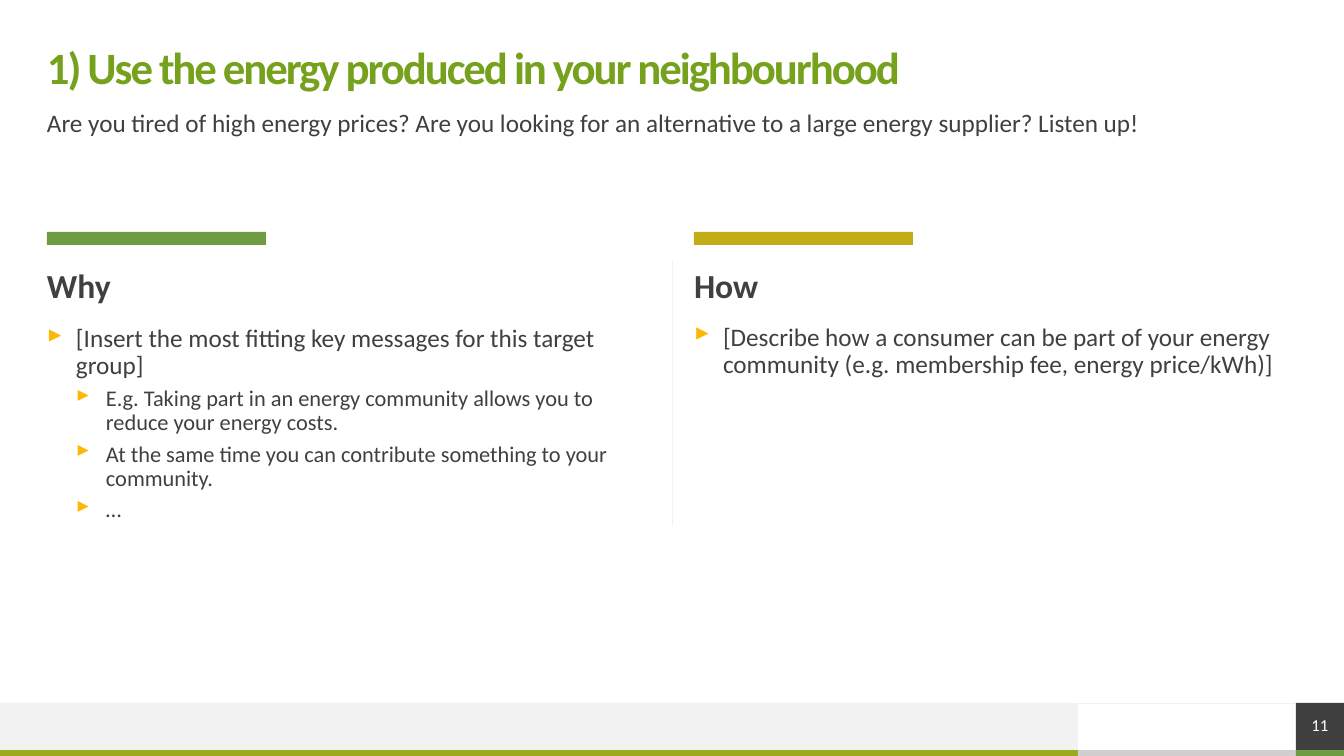
from lxml import etree
from pptx import Presentation
from pptx.dml.color import RGBColor
from pptx.enum.shapes import MSO_CONNECTOR, MSO_SHAPE
from pptx.enum.text import MSO_ANCHOR, PP_ALIGN
from pptx.oxml.ns import qn
from pptx.util import Emu, Pt

RECTANGLE = MSO_SHAPE.RECTANGLE
STRAIGHT = MSO_CONNECTOR.STRAIGHT
TOP, MIDDLE = MSO_ANCHOR.TOP, MSO_ANCHOR.MIDDLE
LEFT, CENTER = PP_ALIGN.LEFT, PP_ALIGN.CENTER

TITLE_GREEN = RGBColor(0x75, 0xA1, 0x1D)
GREEN = RGBColor(0x6D, 0x9D, 0x40)
OLIVE = RGBColor(0x9C, 0xAA, 0x20)
MUSTARD = RGBColor(0xC3, 0xAD, 0x16)
DARK = RGBColor(0x40, 0x40, 0x40)
SILVER = RGBColor(0xD0, 0xCE, 0xCE)
PALE = RGBColor(0xF2, 0xF2, 0xF2)
WHITE = RGBColor(0xFF, 0xFF, 0xFF)
BULLET_COLOR = "FBB804"

TITLE = "1) Use the energy produced in your neighbourhood"
SUBTITLE = ("Are you tired of high energy prices? Are you looking for an "
            "alternative to a large energy supplier? Listen up!")
COLUMNS = [
    {"heading": "Why", "color": GREEN, "body_top": 326, "items": [
        (0, "[Insert the most fitting key messages for this target group]"),
        (1, "E.g. Taking part in an energy community allows you to reduce "
            "your energy costs."),
        (1, "At the same time you can contribute something to your community."),
        (1, "…"),
    ]},
    {"heading": "How", "color": MUSTARD, "body_top": 325, "items": [
        (0, "[Describe how a consumer can be part of your energy community "
            "(e.g. membership fee, energy price/kWh)]"),
    ]},
]
PAGE_NUMBER = "11"

FORMATS = {
    "title": {"size": Pt(32), "bold": True, "color": TITLE_GREEN},
    "subtitle": {"size": Pt(18), "color": DARK},
    "heading": {"size": Pt(24), "bold": True, "color": DARK},
    "level0": {"size": Pt(18), "color": DARK},
    "level1": {"size": Pt(16), "color": DARK},
    "number": {"size": Pt(12), "color": WHITE},
}
LEVELS = [
    {"margin": 29, "indent": -29, "before": Pt(10)},
    {"margin": 59, "indent": -30, "before": Pt(5)},
]

WIDTH, HEIGHT = 1344, 756
MARGIN, GUTTER = 47, 44
CONTENT_WIDTH = WIDTH - 2 * MARGIN
COLUMN_WIDTH = (CONTENT_WIDTH - GUTTER) // 2
BAR_WIDTH, BAR_HEIGHT, BAR_TOP = 219, 13, 232
FOOTER_TOP, STRIP_TOP = 703, 750
BADGE_LEFT = 1296
FOOTER_WIDTH = 1078


def px(value):
    return Emu(round(value * 914400 / 100.8))


def add_box(slide, left, top, width, height, color):
    shape = slide.shapes.add_shape(
        RECTANGLE, px(left), px(top), px(width), px(height))
    shape.shadow.inherit = False
    shape.fill.solid()
    shape.fill.fore_color.rgb = color
    shape.line.fill.background()
    return shape


def add_rule(slide, start_x, start_y, end_x, end_y):
    rule = slide.shapes.add_connector(
        STRAIGHT, px(start_x), px(start_y), px(end_x), px(end_y))
    rule.line.color.rgb = PALE
    rule.line.width = Pt(0.5)
    etree.SubElement(rule._element.spPr, qn("a:effectLst"))


def prepare_frame(shape, anchor):
    frame = shape.text_frame
    frame.word_wrap = True
    frame.vertical_anchor = anchor
    for side in ("left", "top", "right", "bottom"):
        setattr(frame, f"margin_{side}", 0)
    return frame


def write(paragraph, text, style, alignment=LEFT):
    paragraph.alignment = alignment
    paragraph.line_spacing = 0.9
    run = paragraph.add_run()
    run.text = text
    run.font.name = "Calibri"
    for name, value in FORMATS[style].items():
        if name == "color":
            run.font.color.rgb = value
        else:
            setattr(run.font, name, value)
    return run


def add_text_frame(slide, left, top, width, height, anchor=TOP):
    box = slide.shapes.add_textbox(px(left), px(top), px(width), px(height))
    return prepare_frame(box, anchor)


def add_bullet(paragraph, level):
    properties = paragraph._p.get_or_add_pPr()
    properties.set("marL", str(px(LEVELS[level]["margin"])))
    properties.set("indent", str(px(LEVELS[level]["indent"])))
    color = etree.SubElement(properties, qn("a:buClr"))
    etree.SubElement(color, qn("a:srgbClr"), val=BULLET_COLOR)
    etree.SubElement(properties, qn("a:buChar"), char="▸")
    paragraph.level = level


def add_items(frame, items):
    for index, (level, text) in enumerate(items):
        paragraph = frame.add_paragraph() if index else frame.paragraphs[0]
        add_bullet(paragraph, level)
        if index:
            paragraph.space_before = LEVELS[level]["before"]
        write(paragraph, text, f"level{level}")


def add_column(slide, left, column):
    add_box(slide, left, BAR_TOP, BAR_WIDTH, BAR_HEIGHT, column["color"])
    heading = add_text_frame(slide, left, 269, COLUMN_WIDTH, 39)
    write(heading.paragraphs[0], column["heading"], "heading")
    body = add_text_frame(slide, left, column["body_top"], COLUMN_WIDTH, 242)
    add_items(body, column["items"])


def add_footer(slide):
    strip_height = HEIGHT - STRIP_TOP
    add_box(slide, 0, FOOTER_TOP, FOOTER_WIDTH, STRIP_TOP - FOOTER_TOP, PALE)
    edges = [0, FOOTER_WIDTH, BADGE_LEFT, WIDTH]
    for left, right, color in zip(edges, edges[1:], (OLIVE, SILVER, GREEN)):
        add_box(slide, left, STRIP_TOP, right - left, strip_height, color)
    add_rule(slide, WIDTH, FOOTER_TOP, 0, FOOTER_TOP)
    badge = add_box(slide, BADGE_LEFT, FOOTER_TOP, WIDTH - BADGE_LEFT,
                    STRIP_TOP - FOOTER_TOP, DARK)
    number = prepare_frame(badge, MIDDLE).paragraphs[0]
    write(number, PAGE_NUMBER, "number", CENTER)


def main():
    presentation = Presentation()
    presentation.slide_width, presentation.slide_height = px(WIDTH), px(HEIGHT)
    slide = presentation.slides.add_slide(presentation.slide_layouts[6])
    add_footer(slide)
    title = add_text_frame(slide, MARGIN, 47, CONTENT_WIDTH, 47, MIDDLE)
    title_run = write(title.paragraphs[0], TITLE, "title")
    title_run.font._element.set("spc", "-150")
    subtitle = add_text_frame(slide, MARGIN, 111, CONTENT_WIDTH, 39)
    write(subtitle.paragraphs[0], SUBTITLE, "subtitle")
    for index, column in enumerate(COLUMNS):
        add_column(slide, MARGIN + index * (COLUMN_WIDTH + GUTTER), column)
    add_rule(slide, WIDTH // 2, 260, WIDTH // 2, 526)
    presentation.save("out.pptx")


if __name__ == "__main__":
    main()
